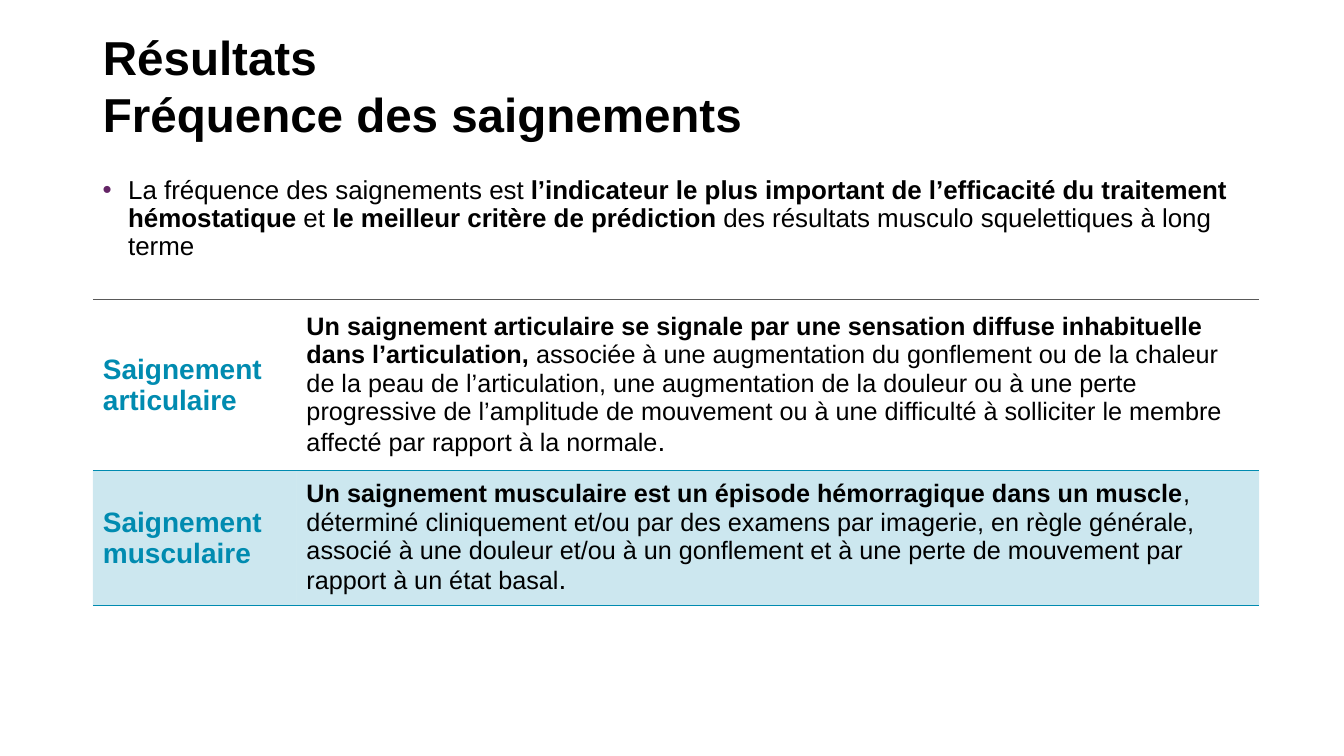
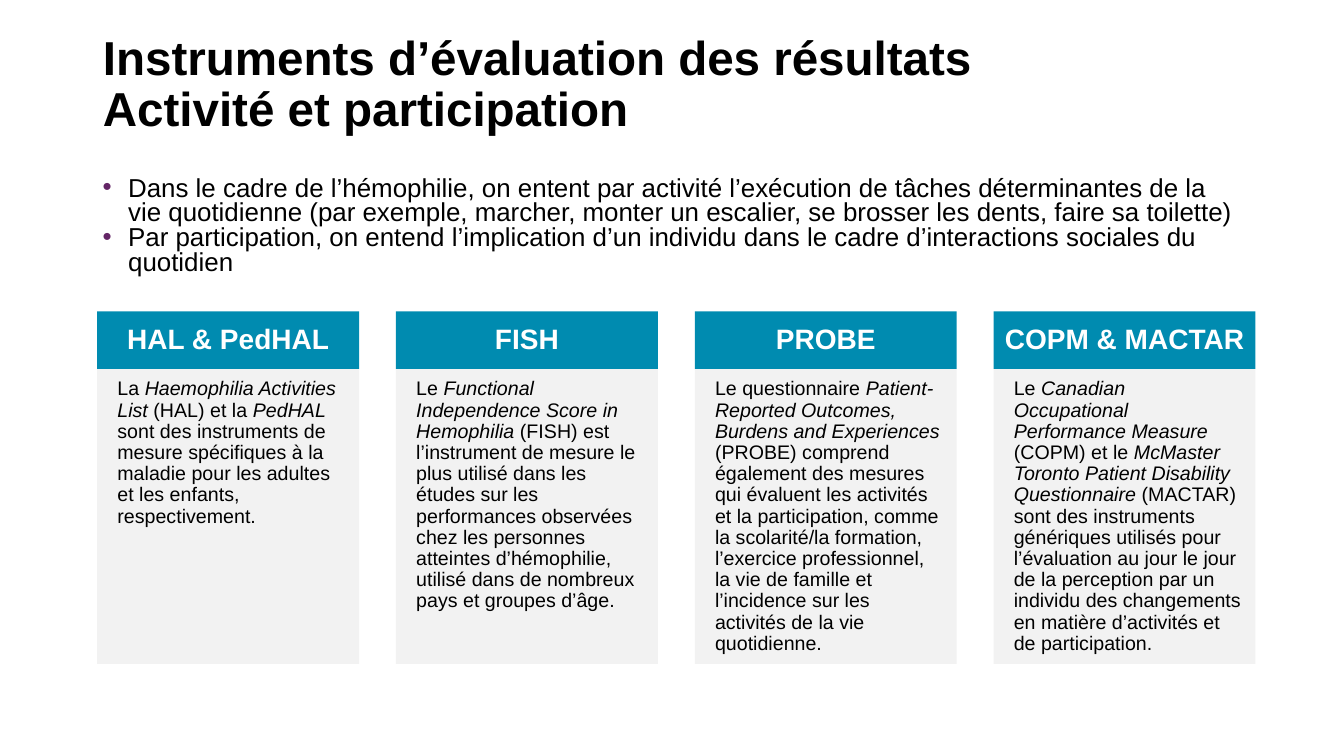
import pptx
import pptx.dml.color
import pptx.enum.shapes
import pptx.enum.text
import pptx.oxml
import pptx.oxml.ns
import pptx.util
from pptx.util import Cm, Pt

RGBColor = pptx.dml.color.RGBColor
BLACK = RGBColor(0x00, 0x00, 0x00)
WHITE = RGBColor(0xFF, 0xFF, 0xFF)
TEAL = RGBColor(0x00, 0x8B, 0xB0)
GREY = RGBColor(0xF2, 0xF2, 0xF2)
RULE = RGBColor(0x59, 0x59, 0x59)
PURPLE = RGBColor(0x64, 0x25, 0x66)

FONT = "Arial"
BOLD = {"bold": True}
ITALIC = {"italic": True}
TITLE_ONLY = 5
LEFT, WIDTH = 2.34, 29.21
MIDDLE = pptx.enum.text.MSO_ANCHOR.MIDDLE
TOP = pptx.enum.text.MSO_ANCHOR.TOP
ALIGN = pptx.enum.text.PP_ALIGN

BLEEDING_POINTS = [
    [("La fréquence des saignements est ", {}),
     ("l’indicateur le plus important de l’efficacité du traitement hémostatique ", BOLD),
     ("et ", {}),
     ("le meilleur critère de prédiction", BOLD),
     (" des résultats musculo squelettiques à long terme", {})],
]
BLEEDING_ROWS = [
    ("Saignement articulaire",
     "Un saignement articulaire se signale par une sensation diffuse inhabituelle dans "
     "l’articulation, ",
     "associée à une augmentation du gonflement ou de la chaleur de la peau de l’articulation, "
     "une augmentation de la douleur ou à une perte progressive de l’amplitude de mouvement ou "
     "à une difficulté à solliciter le membre affecté par rapport à la normale"),
    ("Saignement musculaire",
     "Un saignement musculaire est un épisode hémorragique dans un muscle",
     ", déterminé cliniquement et/ou par des examens par imagerie, en règle générale, associé à "
     "une douleur et/ou à un gonflement et à une perte de mouvement par rapport à un état basal"),
]
ACTIVITY_POINTS = [
    [("Dans le cadre de l’hémophilie, on entent par activité l’exécution de tâches déterminantes "
      "de la vie quotidienne (par exemple, marcher, monter un escalier, se brosser les dents, "
      "faire sa toilette)", {})],
    [("Par participation, on entend l’implication d’un individu dans le cadre d’interactions "
      "sociales du quotidien", {})],
]
INSTRUMENTS = [
    ("HAL & PedHAL",
     [("La ", {}), ("Haemophilia Activities List ", ITALIC), ("(HAL) et la ", {}),
      ("PedHAL", ITALIC),
      (" sont des instruments de mesure spécifiques à la maladie pour les adultes et les "
       "enfants, respectivement.", {})]),
    ("FISH",
     [("Le ", {}), ("Functional Independence Score in Hemophilia ", ITALIC),
      ("(FISH) est l’instrument de mesure le plus utilisé dans les études sur les performances "
       "observées chez les personnes atteintes d’hémophilie, utilisé dans de nombreux pays et "
       "groupes d’âge.", {})]),
    ("PROBE",
     [("Le questionnaire ", {}),
      ("Patient-Reported Outcomes, Burdens and Experiences ", ITALIC),
      ("(PROBE) comprend également des mesures qui évaluent les activités et la participation, "
       "comme la scolarité/la formation, l’exercice professionnel, la vie de famille et "
       "l’incidence sur les activités de la vie quotidienne.", {})]),
    ("COPM & MACTAR",
     [("Le ", {}), ("Canadian Occupational Performance Measure ", ITALIC),
      ("(COPM) et le ", {}),
      ("McMaster Toronto Patient Disability Questionnaire ", ITALIC),
      ("(MACTAR) sont des instruments génériques utilisés pour l’évaluation au jour le jour de "
       "la perception par un individu des changements en matière d’activités et de "
       "participation.", {})]),
]


def set_attributes(target, values):
    for name, value in values.items():
        setattr(target, name, value)


def add_runs(paragraph, runs, size, color=BLACK):
    """Write (text, font overrides) pairs into a paragraph."""
    for text, overrides in runs:
        run = paragraph.add_run()
        run.text = text
        set_attributes(run.font, {"name": FONT, "size": Pt(size), "bold": False, **overrides})
        run.font.color.rgb = color


def add_titled_slide(presentation, lines, spacing):
    slide = presentation.slides.add_slide(presentation.slide_layouts[TITLE_ONLY])
    title = slide.shapes.title
    set_attributes(title, {"left": Cm(LEFT), "top": Cm(0.64),
                           "width": Cm(WIDTH), "height": Cm(3.02)})
    set_attributes(title.text_frame, {"vertical_anchor": MIDDLE, "word_wrap": True,
                                      "auto_size": pptx.enum.text.MSO_AUTO_SIZE.NONE})
    paragraph = title.text_frame.paragraphs[0]
    set_attributes(paragraph, {"alignment": ALIGN.LEFT, "line_spacing": spacing})
    for index, line in enumerate(lines):
        if index:
            paragraph.add_line_break()
        add_runs(paragraph, [(line, BOLD)], 34)
    return slide


def add_bullet(paragraph):
    properties = paragraph._p.get_or_add_pPr()
    properties.set("marL", str(Cm(0.64)))
    properties.set("indent", str(-Cm(0.64)))
    color = pptx.oxml.ns.qn("a:buClr")
    bullet_color = properties.makeelement(color, {})
    bullet_color.append(properties.makeelement(pptx.oxml.ns.qn("a:srgbClr"), {"val": str(PURPLE)}))
    properties.append(bullet_color)
    properties.append(properties.makeelement(pptx.oxml.ns.qn("a:buFont"), {"typeface": FONT}))
    properties.append(properties.makeelement(pptx.oxml.ns.qn("a:buChar"), {"char": "•"}))


def add_bullet_list(slide, points, height, spacing):
    box = slide.shapes.add_textbox(Cm(LEFT), Cm(4.34), Cm(WIDTH), Cm(height))
    frame = box.text_frame
    frame.word_wrap = True
    for index, runs in enumerate(points):
        paragraph = frame.add_paragraph() if index else frame.paragraphs[0]
        add_bullet(paragraph)
        paragraph.line_spacing = spacing
        add_runs(paragraph, runs, 18.5)


def set_borders(cell, top, bottom):
    """Draw only the horizontal borders of a cell, in the given colours."""
    properties = cell._tc.get_or_add_tcPr()
    sides = {"lnL": None, "lnR": None, "lnT": top, "lnB": bottom}
    for index, (side, color) in enumerate(sides.items()):
        line = properties.makeelement(pptx.oxml.ns.qn(f"a:{side}"), {"w": str(Pt(1))})
        fill = "a:solidFill" if color is not None else "a:noFill"
        fill = properties.makeelement(pptx.oxml.ns.qn(fill), {})
        if color is not None:
            fill.append(properties.makeelement(pptx.oxml.ns.qn("a:srgbClr"), {"val": str(color)}))
        line.append(fill)
        properties.insert(index, line)


def shade(cell):
    """Fill a cell with teal at 20 % opacity."""
    cell.fill.solid()
    cell.fill.fore_color.rgb = TEAL
    color = cell._tc.tcPr.find(".//" + pptx.oxml.ns.qn("a:srgbClr"))
    color.append(color.makeelement(pptx.oxml.ns.qn("a:alpha"), {"val": "20000"}))


def add_bleeding_table(slide, left, top, column_widths, row_heights):
    frame = slide.shapes.add_table(len(row_heights), len(column_widths), Cm(left), Cm(top),
                                   Cm(sum(column_widths)), Cm(sum(row_heights)))
    table = frame.table
    set_attributes(table, {"first_row": False, "horz_banding": False})
    for column, width in zip(table.columns, column_widths):
        column.width = Cm(width)
    for index, (label, lead, detail) in enumerate(BLEEDING_ROWS):
        table.rows[index].height = Cm(row_heights[index])
        label_cell, text_cell = table.rows[index].cells
        for cell in (label_cell, text_cell):
            cell.vertical_anchor = MIDDLE
            if index % 2:
                shade(cell)
            else:
                cell.fill.background()
            set_borders(cell, TEAL if index else RULE, TEAL)
        add_runs(label_cell.text_frame.paragraphs[0], [(label, BOLD)], 20, TEAL)
        add_runs(text_cell.text_frame.paragraphs[0],
                 [(lead, BOLD), (detail, {}), (".", {"size": Pt(20)})], 18)


def add_panel(slide, box, fill, margins, anchor):
    """Add a plain filled rectangle and return its first paragraph."""
    shape = slide.shapes.add_shape(pptx.enum.shapes.MSO_SHAPE.RECTANGLE,
                                   *(Cm(length) for length in box))
    shape.shadow.inherit = False
    shape.fill.solid()
    shape.fill.fore_color.rgb = fill
    shape.line.fill.background()
    sides = ("margin_left", "margin_top", "margin_right", "margin_bottom")
    set_attributes(shape.text_frame, {side: Cm(margin) for side, margin in zip(sides, margins)})
    set_attributes(shape.text_frame, {"word_wrap": True, "vertical_anchor": anchor})
    return shape.text_frame.paragraphs[0]


def add_instrument_card(slide, left, top, width, heading, runs):
    heading_height, body_height = 1.45, 7.43
    paragraph = add_panel(slide, (left, top, width, heading_height), TEAL,
                          (0, 0.28, 0, 0.28), MIDDLE)
    set_attributes(paragraph, {"alignment": ALIGN.CENTER, "line_spacing": 0.9})
    add_runs(paragraph, [(heading, BOLD)], 20, WHITE)
    paragraph = add_panel(slide, (left, top + heading_height, width, body_height), GREY,
                          (0.51, 0.25, 0.36, 0.41), TOP)
    set_attributes(paragraph, {"alignment": ALIGN.LEFT, "line_spacing": 0.9})
    add_runs(paragraph, runs, 14)


def build_bleeding_slide(presentation):
    slide = add_titled_slide(presentation, ["Résultats", "Fréquence des saignements"], 1.0)
    add_bullet_list(slide, BLEEDING_POINTS, 2.51, 0.9)
    add_bleeding_table(slide, LEFT, 7.54, (5.13, 24.26), (4.32, 3.33))


def build_instruments_slide(presentation):
    slide = add_titled_slide(
        presentation, ["Instruments d’évaluation des résultats", "Activité et participation"], 0.9)
    add_bullet_list(slide, ACTIVITY_POINTS, 3.61, 0.8)
    card_width, gap = 6.6, 0.93
    for index, (heading, runs) in enumerate(INSTRUMENTS):
        add_instrument_card(slide, 2.45 + index * (card_width + gap), 7.85, card_width,
                            heading, runs)


def main():
    presentation = pptx.Presentation()
    set_attributes(presentation, {"slide_width": Cm(33.87), "slide_height": Cm(19.05)})
    build_bleeding_slide(presentation)
    build_instruments_slide(presentation)
    presentation.save("out.pptx")


if __name__ == "__main__":
    main()
